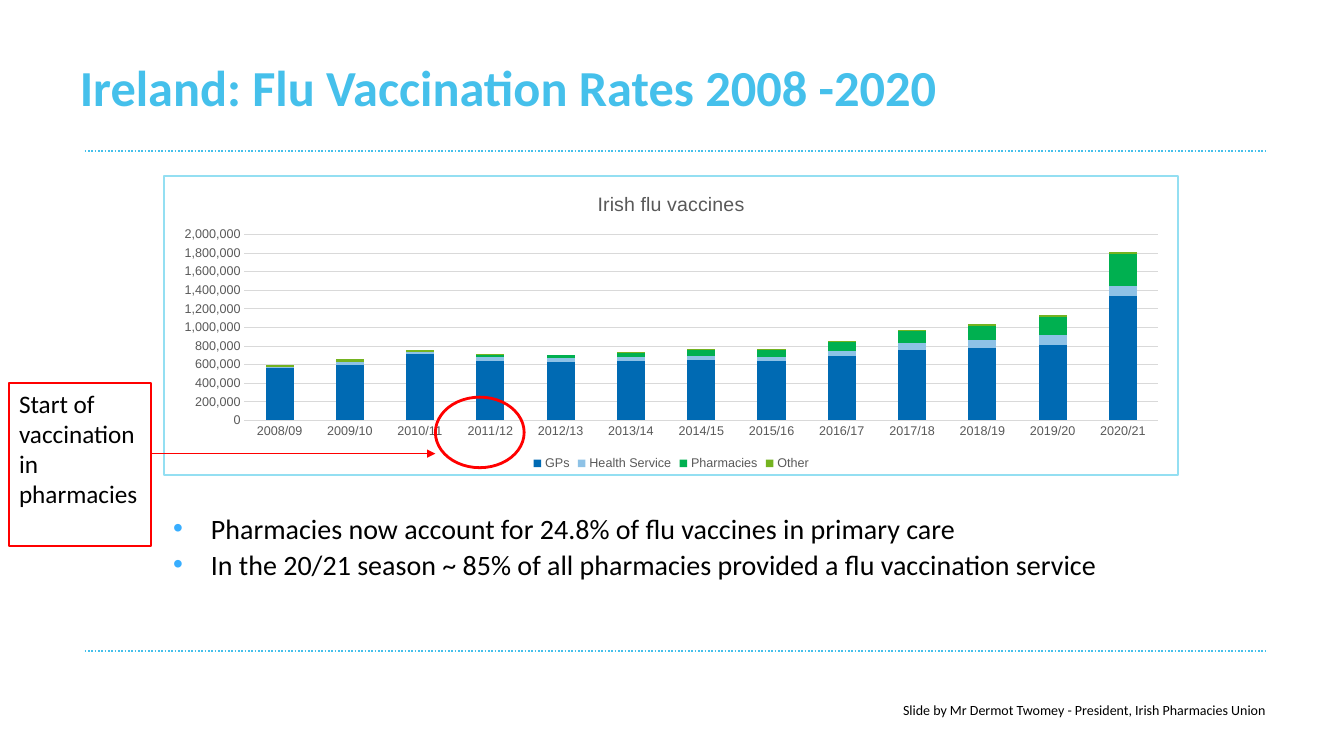
"""Build a slide on Irish flu vaccination rates with a stacked column chart."""
from dataclasses import dataclass
from typing import Any, Optional

import pptx
import pptx.chart.data
import pptx.dml.color
import pptx.enum.chart
import pptx.enum.dml
import pptx.enum.shapes
import pptx.enum.text
import pptx.oxml
import pptx.oxml.ns
import pptx.util

Pt = pptx.util.Pt
Box = tuple[float, float, float, float]


@dataclass(frozen=True)
class Theme:
    accent: str = "45C0EB"
    bullet: str = "38AEFF"
    text: str = "000000"
    alert: str = "FF0000"
    chart_text: str = "595959"
    grid: str = "D9D9D9"
    chart_border: str = "94DFF2"
    body_font: str = "Calibri"
    chart_font: str = "Arial"
    title_size: float = 36
    bullet_size: float = 20
    callout_size: float = 18
    credit_size: float = 10
    chart_title_size: float = 14
    chart_size: float = 9


@dataclass(frozen=True)
class Line:
    start: tuple[float, float]
    end: tuple[float, float]
    color: str
    width: float
    dash: Optional[pptx.enum.dml.MSO_LINE] = None
    arrow: bool = False


@dataclass(frozen=True)
class Outline:
    kind: pptx.enum.shapes.MSO_SHAPE
    box: Box
    width: float


@dataclass(frozen=True)
class Series:
    name: str
    color: str
    thousands: tuple[int, ...]


THEME = Theme()
RULES = [
    Line((60.5, y), (903.6, y), THEME.accent, 1.2, pptx.enum.dml.MSO_LINE.ROUND_DOT)
    for y in (108, 465)
]
ARROW = Line((108, 324), (311, 324), THEME.alert, 0.5, arrow=True)
HIGHLIGHT = Outline(pptx.enum.shapes.MSO_SHAPE.OVAL, (311, 283.7, 63.4, 50.4), 2)
CALLOUT = Outline(pptx.enum.shapes.MSO_SHAPE.RECTANGLE, (6.5, 273.6, 101.5, 116.6), 1.25)
SEASONS = [f"{year}/{(year + 1) % 100:02d}" for year in range(2008, 2021)]
SERIES = [
    Series("GPs", "006AB3",
           (560, 600, 710, 640, 630, 640, 650, 640, 690, 760, 780, 810, 1340)),
    Series("Health Service", "8EC2E6",
           (20, 30, 30, 40, 40, 40, 40, 40, 60, 70, 90, 110, 110)),
    Series("Pharmacies", "00B050",
           (0, 0, 0, 20, 30, 50, 70, 80, 90, 130, 150, 190, 340)),
    Series("Other", "74B320",
           (20, 30, 20, 10, 0, 10, 10, 10, 10, 10, 20, 20, 20)),
]
BULLETS = [
    "Pharmacies now account for 24.8% of flu vaccines in primary care",
    "In the 20/21 season ~ 85% of all pharmacies provided a flu vaccination service",
]


def rgb(color: str) -> pptx.dml.color.RGBColor:
    """Return the colour for a hex string."""
    return pptx.dml.color.RGBColor.from_string(color)


def set_format(target: Any, values: dict[str, Any]) -> None:
    """Set each named attribute on the target."""
    for name, value in values.items():
        setattr(target, name, value)


def set_font(font: Any, name: str, size: float, color: str, bold: bool = False) -> None:
    """Set the face, size, weight and colour of a font."""
    set_format(font, {"name": name, "size": Pt(size), "bold": bold})
    font.color.rgb = rgb(color)


def set_line(line: Any, color: str, width: float) -> None:
    """Set the colour and width of a line."""
    line.color.rgb = rgb(color)
    line.width = Pt(width)


def drawing_element(tag: str, attributes: str = "") -> Any:
    """Return a new empty DrawingML element."""
    return pptx.oxml.parse_xml(f'<a:{tag} {pptx.oxml.ns.nsdecls("a")} {attributes}/>')


def write_paragraphs(frame: Any, lines: list[str], size: float) -> list[Any]:
    """Fill a text frame with body text and return its paragraphs."""
    frame.word_wrap = True
    frame.text = "\n".join(lines)
    for paragraph in frame.paragraphs:
        set_font(paragraph.font, THEME.body_font, size, THEME.text)
    return list(frame.paragraphs)


def add_line(slide: Any, line: Line) -> None:
    """Draw a straight line, with an arrowhead if asked."""
    connector = slide.shapes.add_connector(
        pptx.enum.shapes.MSO_CONNECTOR.STRAIGHT, *map(Pt, line.start + line.end))
    set_line(connector.line, line.color, line.width)
    if line.dash:
        connector.line.dash_style = line.dash
    properties = connector.element.spPr
    if line.arrow:
        outline = properties.find(pptx.oxml.ns.qn("a:ln"))
        outline.append(drawing_element("tailEnd", 'type="triangle"'))
    properties.append(drawing_element("effectLst"))


def add_outline(slide: Any, outline: Outline) -> Any:
    """Draw an unfilled red shape."""
    shape = slide.shapes.add_shape(outline.kind, *map(Pt, outline.box))
    shape.shadow.inherit = False
    shape.fill.background()
    set_line(shape.line, THEME.alert, outline.width)
    return shape


def add_title(slide: Any) -> None:
    """Place and format the slide title."""
    title = slide.shapes.title
    set_format(title, {"left": Pt(57), "top": Pt(51), "width": Pt(847), "height": Pt(36)})
    frame = title.text_frame
    frame.text = "Ireland: Flu Vaccination Rates 2008 -2020"
    set_format(frame, {
        "margin_left": 0, "margin_top": 0, "margin_right": 0, "margin_bottom": 0,
        "vertical_anchor": pptx.enum.text.MSO_ANCHOR.TOP,
        "auto_size": pptx.enum.text.MSO_AUTO_SIZE.NONE, "word_wrap": True})
    paragraph = frame.paragraphs[0]
    set_format(paragraph, {"alignment": pptx.enum.text.PP_ALIGN.LEFT, "line_spacing": Pt(32)})
    set_font(paragraph.font, THEME.body_font, THEME.title_size, THEME.accent, True)


def add_bullets(slide: Any) -> None:
    """Write the bulleted findings below the chart."""
    frame = slide.shapes.add_textbox(*map(Pt, (116.6, 360, 696.2, 110))).text_frame
    for paragraph in write_paragraphs(frame, BULLETS, THEME.bullet_size):
        set_format(paragraph, {
            "alignment": pptx.enum.text.PP_ALIGN.JUSTIFY, "line_spacing": 1.07})
        properties = paragraph.font._element.getparent()
        set_format(properties, {})
        properties.set("marL", str(Pt(27)))
        properties.set("indent", str(-Pt(27)))
        color = drawing_element("buClr")
        color.append(drawing_element("srgbClr", f'val="{THEME.bullet}"'))
        run_defaults = properties.find(pptx.oxml.ns.qn("a:defRPr"))
        run_defaults.addprevious(color)
        run_defaults.addprevious(drawing_element("buFont", 'typeface="Arial"'))
        run_defaults.addprevious(drawing_element("buChar", 'char="•"'))


def add_vaccine_chart(slide: Any) -> None:
    """Draw the stacked columns of vaccines by provider."""
    data = pptx.chart.data.CategoryChartData(number_format="#,##0")
    data.categories = SEASONS
    for series in SERIES:
        data.add_series(series.name, [value * 1000 for value in series.thousands])
    chart = slide.shapes.add_chart(
        pptx.enum.chart.XL_CHART_TYPE.COLUMN_STACKED,
        *map(Pt, (116.6, 125.3, 725.8, 214.6)), data).chart
    set_font(chart.font, THEME.chart_font, THEME.chart_size, THEME.chart_text)
    set_format(chart, {"has_title": True, "has_legend": True})
    title = chart.chart_title
    title.include_in_layout = False
    title.text_frame.text = "Irish flu vaccines"
    set_font(title.text_frame.paragraphs[0].runs[0].font, THEME.chart_font,
             THEME.chart_title_size, THEME.chart_text)
    set_format(chart.legend, {
        "position": pptx.enum.chart.XL_LEGEND_POSITION.BOTTOM, "include_in_layout": False})
    plot = chart.plots[0]
    set_format(plot, {"gap_width": 150, "overlap": 100, "vary_by_categories": False})
    for drawn, series in zip(plot.series, SERIES):
        drawn.format.fill.solid()
        drawn.format.fill.fore_color.rgb = rgb(series.color)
    for axis in (chart.category_axis, chart.value_axis):
        axis.major_tick_mark = pptx.enum.chart.XL_TICK_MARK.NONE
        set_font(axis.tick_labels.font, THEME.chart_font, THEME.chart_size, THEME.chart_text)
    set_line(chart.category_axis.format.line, THEME.grid, 0.75)
    values = chart.value_axis
    set_format(values, {"minimum_scale": 0, "maximum_scale": 2000000, "major_unit": 200000})
    set_format(values.tick_labels, {"number_format": "#,##0", "number_format_is_linked": False})
    values.format.line.fill.background()
    set_line(values.major_gridlines.format.line, THEME.grid, 0.75)
    border = pptx.oxml.parse_xml(
        f'<c:spPr {pptx.oxml.ns.nsdecls("c", "a")}><a:noFill/><a:ln w="{Pt(1.5)}"><a:solidFill>'
        f'<a:srgbClr val="{THEME.chart_border}"/></a:solidFill></a:ln></c:spPr>')
    chart.element.find(pptx.oxml.ns.qn("c:chart")).addnext(border)


def add_callout(slide: Any) -> None:
    """Mark the season in which pharmacies began to vaccinate."""
    add_outline(slide, HIGHLIGHT)
    frame = add_outline(slide, CALLOUT).text_frame
    frame.vertical_anchor = pptx.enum.text.MSO_ANCHOR.TOP
    lines = ["Start of", "vaccination in pharmacies"]
    for paragraph in write_paragraphs(frame, lines, THEME.callout_size):
        paragraph.alignment = pptx.enum.text.PP_ALIGN.LEFT
    add_line(slide, ARROW)


def main() -> None:
    """Build and save the presentation."""
    presentation = pptx.Presentation()
    set_format(presentation, {"slide_width": Pt(960), "slide_height": Pt(540)})
    slide = presentation.slides.add_slide(presentation.slide_layouts.get_by_name("Title Only"))
    for rule in RULES:
        add_line(slide, rule)
    add_title(slide)
    add_bullets(slide)
    add_vaccine_chart(slide)
    add_callout(slide)
    credit = slide.shapes.add_textbox(*map(Pt, (638, 497.5, 308, 19.5)))
    write_paragraphs(
        credit.text_frame, ["Slide by Mr Dermot Twomey - President, Irish Pharmacies Union"],
        THEME.credit_size)
    presentation.save("out.pptx")


if __name__ == "__main__":
    main()
